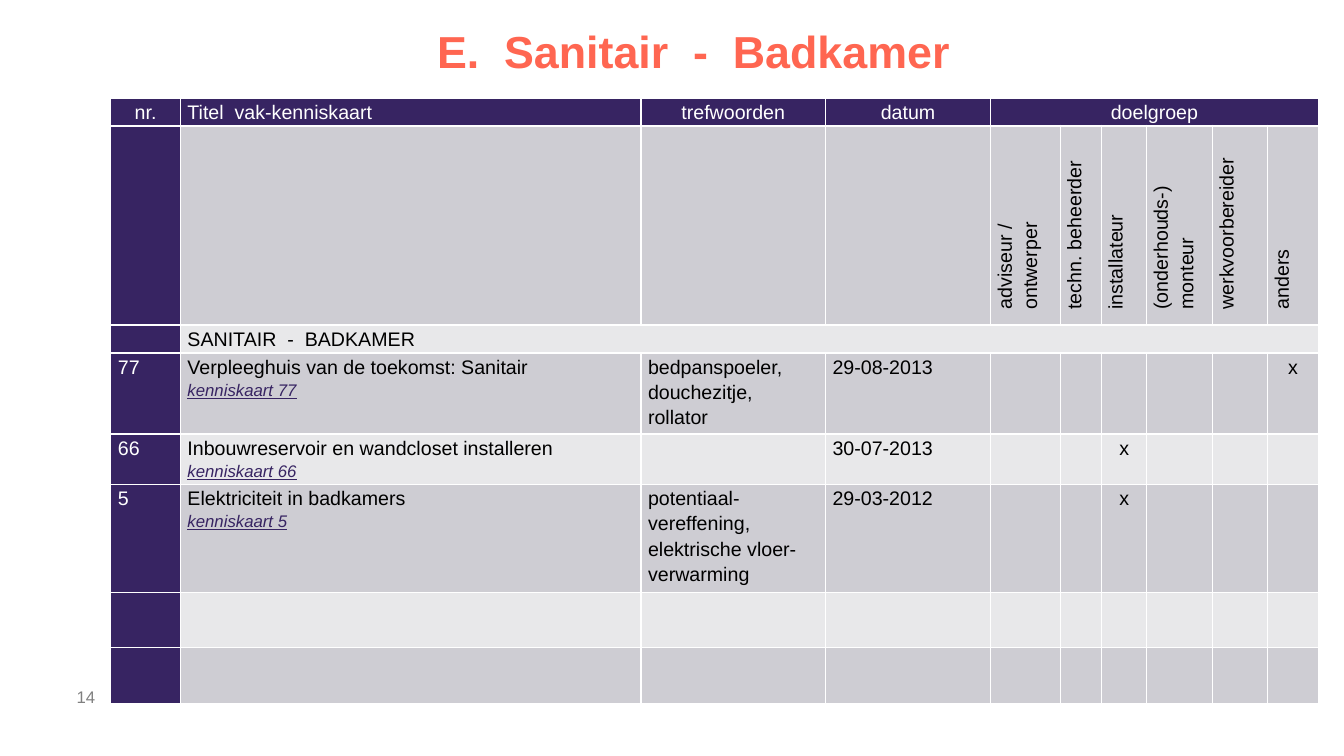
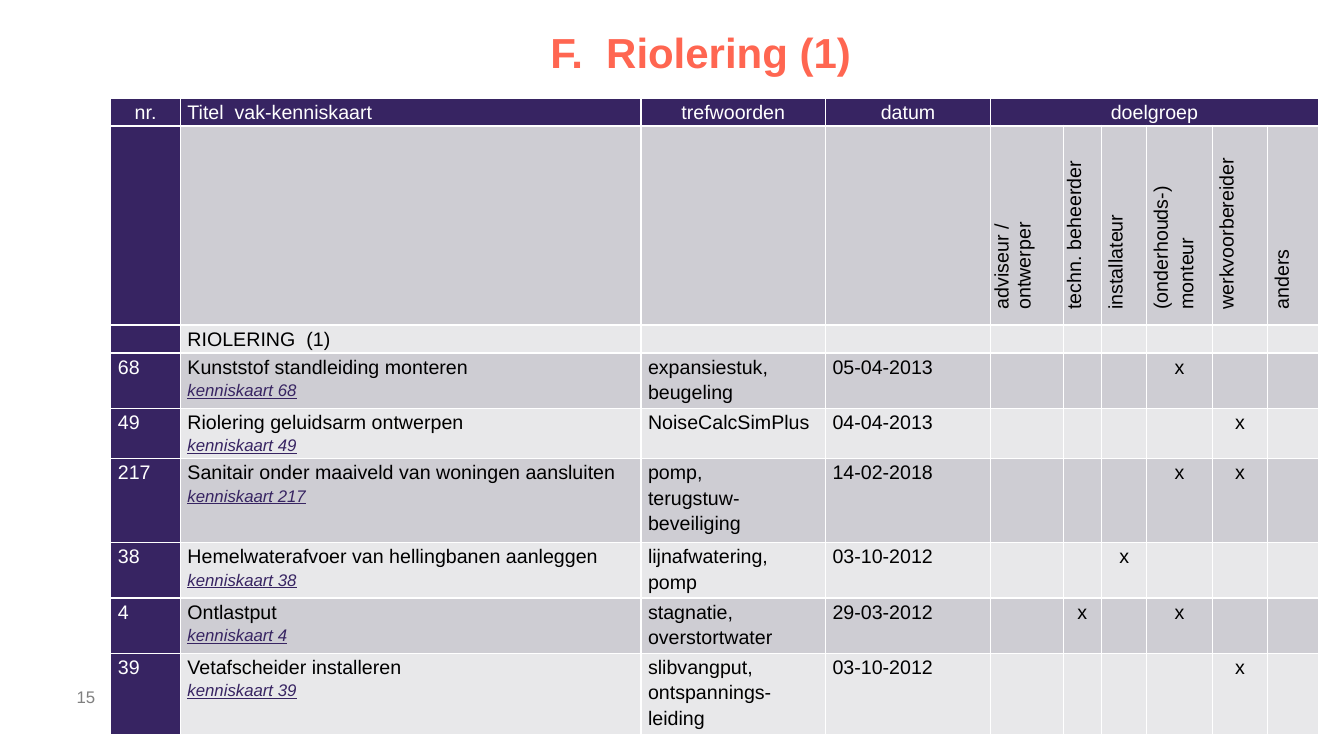
from pptx import Presentation
from pptx.dml.color import RGBColor
from pptx.enum.text import MSO_ANCHOR, PP_ALIGN
from pptx.oxml.ns import qn
from pptx.util import Pt
from lxml.etree import SubElement

PURPLE = RGBColor(0x37, 0x24, 0x62)
CORAL = RGBColor(0xFF, 0x66, 0x51)
DARK_BAND = RGBColor(0xCE, 0xCD, 0xD3)
LIGHT_BAND = RGBColor(0xE8, 0xE8, 0xEA)
GREY = RGBColor(0x80, 0x80, 0x80)
WHITE = RGBColor(0xFF, 0xFF, 0xFF)
BLACK = RGBColor(0, 0, 0)

FONT = "Arial"
HEADINGS = ["nr.", "Titel  vak-kenniskaart", "trefwoorden", "datum", "doelgroep"]
GROUPS = [["adviseur /", "ontwerper"], ["techn. beheerder"], ["installateur"],
          ["(onderhouds-)", "monteur"], ["werkvoorbereider"], ["anders"]]
ADVISER, MANAGER, INSTALLER, MECHANIC, PLANNER, OTHER = range(4, 10)
TOP_ROWS = [18.6, 142.2, 20]

BATHROOM_CARDS = [
    ("77", "Verpleeghuis van de toekomst: Sanitair", 82,
     ["bedpanspoeler,", "douchezitje,", "rollator"], "29-08-2013", [OTHER], 54.3),
    ("66", "Inbouwreservoir en wandcloset installeren", 0,
     [], "30-07-2013", [INSTALLER], 33.5),
    ("5", "Elektriciteit in badkamers", 168,
     ["potentiaal-vereffening,", "elektrische vloer-", "verwarming"],
     "29-03-2012", [INSTALLER], 72.2),
    ("", "", 0, [], "", [], 39.6),
    ("", "", 0, [], "", [], 39.6),
]
SEWER_CARDS = [
    ("68", "Kunststof standleiding monteren", 0,
     ["expansiestuk,", "beugeling"], "05-04-2013", [MECHANIC], 39.6),
    ("49", "Riolering geluidsarm ontwerpen", 0,
     ["NoiseCalcSimPlus"], "04-04-2013", [PLANNER], 33.5),
    ("217", "Sanitair onder maaiveld van woningen aansluiten", 105,
     ["pomp,", "terugstuw-beveiliging"], "14-02-2018", [MECHANIC, PLANNER], 60),
    ("38", "Hemelwaterafvoer van hellingbanen aanleggen", 91.5,
     ["lijnafwatering,", "pomp"], "03-10-2012", [INSTALLER], 39.6),
    ("4", "Ontlastput", 105,
     ["stagnatie,", "overstortwater"], "29-03-2012", [MANAGER, MECHANIC], 39.6),
    ("39", "Vetafscheider installeren", 98,
     ["slibvangput,", "ontspannings-leiding"], "03-10-2012", [PLANNER], 54.3),
]


def write(tf, text, size=14, color=BLACK, bold=False, italic=False, underline=False,
          align=PP_ALIGN.LEFT, spacing=1.15, indent=0, tab=0):
    p = tf.paragraphs[-1]
    if p.runs:
        p = tf.add_paragraph()
    pPr = p._p.get_or_add_pPr()
    if indent:
        pPr.set("marL", str(Pt(indent)))
        pPr.set("indent", "0")
    if tab:
        tabs = SubElement(pPr, qn("a:tabLst"))
        SubElement(tabs, qn("a:tab"), pos=str(Pt(tab)), algn="l")
    p.alignment = align
    p.line_spacing = spacing
    if not text:
        SubElement(p._p, qn("a:endParaRPr"), sz=str(size * 100))
        return
    r = p.add_run()
    r.text = text + "\t" if tab else text
    r.font.name = FONT
    r.font.size = Pt(size)
    r.font.color.rgb = color
    r.font.bold = bold
    r.font.italic = italic
    r.font.underline = underline


def add_text(s, left, top, width, height, text, margin_right=0, **fmt):
    tf = s.shapes.add_textbox(Pt(left), Pt(top), Pt(width), Pt(height)).text_frame
    tf.word_wrap = True
    tf.vertical_anchor = MSO_ANCHOR.MIDDLE
    tf.margin_left = tf.margin_top = tf.margin_bottom = 0
    tf.margin_right = Pt(margin_right)
    write(tf, text, **fmt)


def style_cell(cell, row, fill):
    cell.margin_left = cell.margin_right = Pt(5)
    cell.margin_top = cell.margin_bottom = 0
    tcPr = cell._tc.get_or_add_tcPr()
    for side, edge in (("L", None), ("R", None), ("T", row), ("B", row + 1)):
        width = 2 if edge == 1 else 1
        ln = SubElement(tcPr, qn(f"a:ln{side}"), w=str(Pt(width)))
        line_fill = SubElement(ln, qn("a:solidFill"))
        SubElement(line_fill, qn("a:srgbClr"), val=str(WHITE))
    cell.fill.solid()
    cell.fill.fore_color.rgb = fill


def fill_cell(cell, lines, **fmt):
    for line in lines or [""]:
        write(cell.text_frame, line, **fmt)


def add_group_labels(table, tight_columns):
    for col, lines in enumerate(GROUPS, ADVISER):
        cell = table.cell(1, col)
        cell._tc.get_or_add_tcPr().set("vert", "vert270")
        fill_cell(cell, lines, indent=6, spacing=1 if col in tight_columns else 1.15)


def add_card(table, row, card):
    nr, title, tail, keywords, date, marks, _ = card
    fill_cell(table.cell(row, 0), [nr], color=WHITE)
    fill_cell(table.cell(row, 1), [title])
    if nr:
        write(table.cell(row, 1).text_frame, f"kenniskaart {nr}", size=12,
              color=PURPLE, italic=True, underline=True, tab=tail)
    fill_cell(table.cell(row, 2), keywords)
    fill_cell(table.cell(row, 3), [date])
    for col in range(ADVISER, OTHER + 1):
        fill_cell(table.cell(row, col), ["x" if col in marks else ""],
                  align=PP_ALIGN.CENTER)


def add_card_table(s, section, cards, adviser_width, merge_section, tight_columns):
    widths = [49.7, 329, 131.8, 118, adviser_width, 79.2 - adviser_width,
              32.4, 46.8, 39.6, 36]
    heights = TOP_ROWS + [card[-1] for card in cards]
    table = s.shapes.add_table(len(heights), len(widths), Pt(79.2), Pt(70.6),
                               Pt(sum(widths)), Pt(sum(heights))).table
    table.first_row = table.horz_banding = False
    for column, width in zip(table.columns, widths):
        column.width = Pt(width)
    for row, height in enumerate(heights):
        table.rows[row].height = Pt(height)
        band = DARK_BAND if row % 2 else LIGHT_BAND
        for col in range(len(widths)):
            style_cell(table.cell(row, col), row,
                       PURPLE if row == 0 or col == 0 else band)
    table.cell(0, ADVISER).merge(table.cell(0, OTHER))
    if merge_section:
        table.cell(2, 1).merge(table.cell(2, OTHER))
    for col, heading in enumerate(HEADINGS):
        fill_cell(table.cell(0, col), [heading], color=WHITE,
                  align=PP_ALIGN.LEFT if col == 1 else PP_ALIGN.CENTER)
    add_group_labels(table, tight_columns)
    for col in range(len(widths)):
        fill_cell(table.cell(2, col), [section if col == 1 else ""])
    for row, card in enumerate(cards, len(TOP_ROWS)):
        add_card(table, row, card)


def add_card_slide(prs, number, title, title_size, title_margin, section, cards,
                   adviser_width=49.7, merge_section=False, tight_columns=()):
    s = prs.slides.add_slide(prs.slide_layouts[6])
    add_text(s, 54.7, 483, 51, 29, str(number), size=12, color=GREY, spacing=1)
    add_card_table(s, section, cards, adviser_width, merge_section, tight_columns)
    add_text(s, 80.6, 19.4, 848, 39, title, margin_right=title_margin, size=title_size,
             color=CORAL, bold=True, align=PP_ALIGN.CENTER, spacing=0.9)


def main():
    prs = Presentation()
    prs.slide_width, prs.slide_height = Pt(960), Pt(540)
    add_card_slide(prs, 14, "E.  Sanitair  -  Badkamer", 32, 18,
                   "SANITAIR  -  BADKAMER", BATHROOM_CARDS, merge_section=True)
    add_card_slide(prs, 15, "F.  Riolering (1)", 30, 8, "RIOLERING  (1)", SEWER_CARDS,
                   adviser_width=51.8, tight_columns=(ADVISER, MANAGER))
    prs.save("out.pptx")


if __name__ == "__main__":
    main()
